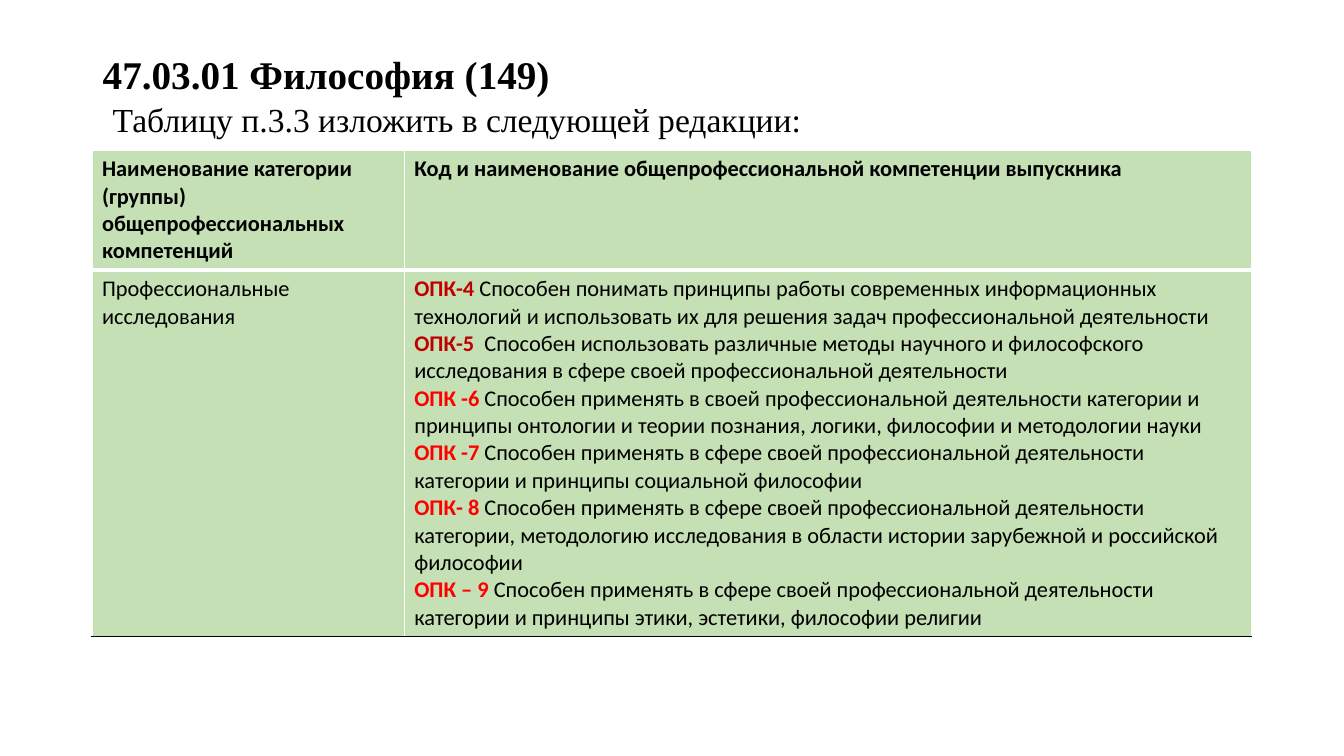
from lxml.etree import SubElement
from pptx import Presentation
from pptx.dml.color import RGBColor
from pptx.enum.text import MSO_ANCHOR
from pptx.oxml.ns import qn
from pptx.util import Cm, Pt

BLACK = RGBColor(0x00, 0x00, 0x00)
WHITE = RGBColor(0xFF, 0xFF, 0xFF)
GREEN = RGBColor(0xC5, 0xE0, 0xB4)
DARK_RED = RGBColor(0xC0, 0x00, 0x00)
RED = RGBColor(0xFF, 0x00, 0x00)

HEADERS = [
    "Наименование категории (группы) общепрофессиональных компетенций",
    "Код и наименование общепрофессиональной компетенции выпускника",
]
CATEGORY = "Профессиональные исследования"
COMPETENCES = [
    ("ОПК-4 ", DARK_RED, "Способен понимать принципы работы современных информационных "
     "технологий и использовать их для решения задач профессиональной деятельности"),
    ("ОПК-5 ", DARK_RED, " Способен использовать различные методы научного и философского "
     "исследования в сфере своей профессиональной деятельности"),
    ("ОПК -6 ", RED, "Способен применять в своей профессиональной деятельности категории и "
     "принципы онтологии и теории познания, логики, философии и методологии науки"),
    ("ОПК -7 ", RED, "Способен применять в сфере своей профессиональной деятельности "
     "категории и принципы социальной философии"),
    ("ОПК- 8 ", RED, "Способен применять в сфере своей профессиональной деятельности "
     "категории, методологию исследования в области истории зарубежной и российской философии"),
    ("ОПК – 9 ", RED, "Способен применять в сфере своей профессиональной деятельности "
     "категории и принципы этики, эстетики, философии религии"),
]


def add_run(p, text, font="Calibri", size=16, color=BLACK, bold=False):
    r = p.add_run()
    r.text = text
    r.font.name = font
    r.font.size = Pt(size)
    r.font.color.rgb = color
    r.font.bold = bold


class SlideBuilder:
    """Adds styled elements to the current slide."""

    title_font = "Times New Roman"
    cell_fill = GREEN

    def __init__(self, s):
        self.s = s

    def title(self, heading, subtitle, left, top, width, height):
        tf = self.s.shapes.add_textbox(Cm(left), Cm(top), Cm(width), Cm(height)).text_frame
        tf.word_wrap = True
        tf.vertical_anchor = MSO_ANCHOR.TOP
        p = tf.paragraphs[0]
        p.line_spacing = 0.9
        add_run(p, heading, font=self.title_font, size=28, bold=True)
        p = tf.add_paragraph()
        p.line_spacing = 0.9
        p.space_before = Pt(4)
        p._p.get_or_add_pPr().set("marL", str(Cm(0.25)))
        add_run(p, subtitle, font=self.title_font, size=24)

    def table(self, left, top, widths, heights):
        frame = self.s.shapes.add_table(
            len(heights), len(widths), Cm(left), Cm(top), Cm(sum(widths)), Cm(sum(heights)))
        table = frame.table
        for column, width in zip(table.columns, widths):
            column.width = Cm(width)
        for row, height in zip(table.rows, heights):
            row.height = Cm(height)
        return table

    def cell(self, cell, paragraphs, top=(WHITE, 1), bottom=(WHITE, 3)):
        borders = {"a:lnL": (WHITE, 1), "a:lnR": (WHITE, 1), "a:lnT": top, "a:lnB": bottom}
        tcPr = cell._tc.get_or_add_tcPr()
        for tag, (color, width) in borders.items():
            ln = SubElement(tcPr, qn(tag), w=str(Pt(width)))
            SubElement(SubElement(ln, qn("a:solidFill")), qn("a:srgbClr"), val=str(color))
        cell.fill.solid()
        cell.fill.fore_color.rgb = self.cell_fill
        tf = cell.text_frame
        for i, runs in enumerate(paragraphs):
            p = tf.add_paragraph() if i else tf.paragraphs[0]
            for text, style in runs:
                add_run(p, text, **style)


def main():
    prs = Presentation()
    prs.slide_width, prs.slide_height = Cm(33.87), Cm(19.05)
    builder = SlideBuilder(prs.slides.add_slide(prs.slide_layouts[6]))
    builder.title("47.03.01 Философия (149)", "Таблицу п.3.3 изложить в следующей редакции:",
                  2.34, 1.27, 29.21, 2.4)

    table = builder.table(2.32, 3.79, widths=[7.87, 21.34], heights=[3.02, 9.22])
    for column, header in enumerate(HEADERS):
        builder.cell(table.cell(0, column), [[(header, {"bold": True})]])
    competences = [[(code, {"color": color, "bold": True}), (text, {})]
                   for code, color, text in COMPETENCES]
    for column, paragraphs in enumerate([[[(CATEGORY, {})]], competences]):
        builder.cell(table.cell(1, column), paragraphs, top=(WHITE, 3), bottom=(BLACK, 1))

    prs.save("out.pptx")


if __name__ == "__main__":
    main()
